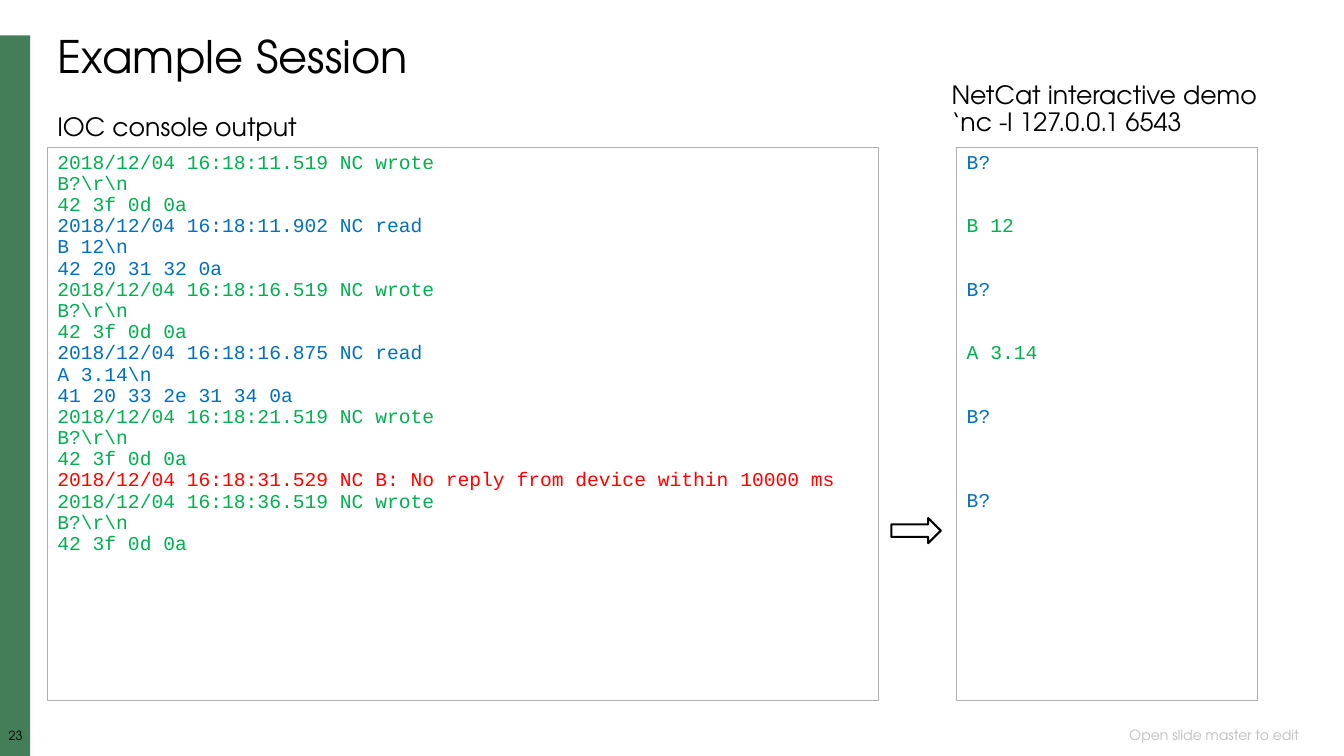
"""Build the example session slide with its console and client panels."""
from dataclasses import dataclass
from typing import Any

from pptx import Presentation, util as u
from pptx.dml.color import RGBColor
from pptx.enum import shapes, text


@dataclass(frozen=True)
class Theme:
    heading: str = "TeX Gyre Adventor"
    mono: str = "Courier New"
    ink: str = "000000"
    band: str = "447E59"
    border: str = "AEB0AF"
    muted: str = "BFBFBF"
    wrote: str = "00B050"
    read: str = "0070C0"
    error: str = "FF0000"
    title_size: int = 32
    label_size: int = 18
    code_size: int = 14
    footer_size: int = 10
    number_size: int = 9
    leading: float = 0.9
    code_pitch: float = 15.12


@dataclass(frozen=True)
class Area:
    """Hold a position and size in percent of the slide."""
    left: float
    top: float
    width: float
    height: float


@dataclass(frozen=True)
class Line:
    words: str
    colour: str
    rows_skipped: int = 0


@dataclass(frozen=True)
class Block:
    area: Area
    lines: list[Line]
    size: int
    font: str
    frame_format: dict[str, Any]
    align: Any = text.PP_ALIGN.LEFT


@dataclass(frozen=True)
class Outline:
    kind: Any
    area: Area
    fill: str | None = None
    line: str | None = None
    weight: float = 0


THEME = Theme()
PANEL_TOP, PANEL_HEIGHT = 19.47, 73.2
TEXT_LEFT = 3.53
CONSOLE = Area(TEXT_LEFT, PANEL_TOP, 61.82, PANEL_HEIGHT)
CLIENT = Area(71.19, PANEL_TOP, 22.36, PANEL_HEIGHT)
WRAPPED = {"word_wrap": True}
UNWRAPPED = {"word_wrap": False}
CENTRED = {"word_wrap": True, "vertical_anchor": text.MSO_ANCHOR.MIDDLE}
NO_MARGINS = {"word_wrap": True, "margin_left": 0, "margin_top": 0,
              "margin_right": 0, "margin_bottom": 0}

QUERY = ("NC wrote", r"B?\r\n", "42 3f 0d 0a")
EVENTS = [
    ("16:18:11.519", THEME.wrote, QUERY),
    ("16:18:11.902", THEME.read, ("NC read", r"B 12\n", "42 20 31 32 0a")),
    ("16:18:16.519", THEME.wrote, QUERY),
    ("16:18:16.875", THEME.read, ("NC read", r"A 3.14\n", "41 20 33 2e 31 34 0a")),
    ("16:18:21.519", THEME.wrote, QUERY),
    ("16:18:31.529", THEME.error, ("NC B: No reply from device within 10000 ms",)),
    ("16:18:36.519", THEME.wrote, QUERY),
]
CONSOLE_LINES = [
    Line(words if row else f"2018/12/04 {time} {words}", colour)
    for time, colour, message in EVENTS
    for row, words in enumerate(message)
]
CLIENT_LINES = [
    Line("B?", THEME.read),
    Line("B 12", THEME.wrote, 2),
    Line("B?", THEME.read, 2),
    Line("A 3.14", THEME.wrote, 2),
    Line("B?", THEME.read, 2),
    Line("B?", THEME.read, 3),
]

OUTLINES = [
    Outline(shapes.MSO_SHAPE.RECTANGLE, Area(0, 4.67, 2.25, 95.33), fill=THEME.band),
    Outline(shapes.MSO_SHAPE.RECTANGLE, CLIENT, line=THEME.border, weight=0.75),
    Outline(shapes.MSO_SHAPE.RECTANGLE, CONSOLE, line=THEME.border, weight=0.75),
    Outline(shapes.MSO_SHAPE.RIGHT_ARROW, Area(66.32, 68.53, 3.68, 3.33),
            line=THEME.ink, weight=1.5),
]
BLOCKS = [
    Block(Area(0, 96.53, 2.33, 2.27), [Line("23", THEME.ink)],
          THEME.number_size, THEME.heading, NO_MARGINS, text.PP_ALIGN.CENTER),
    Block(Area(65.72, 96, 31.66, 2.67), [Line("Open slide master to edit", THEME.muted)],
          THEME.footer_size, THEME.heading, CENTRED, text.PP_ALIGN.RIGHT),
    Block(Area(TEXT_LEFT, 4, 93.77, 7.87), [Line("Example Session", THEME.ink)],
          THEME.title_size, THEME.heading, WRAPPED),
    Block(Area(TEXT_LEFT, 14.53, 19.5, 4.93), [Line("IOC console output", THEME.ink)],
          THEME.label_size, THEME.heading, UNWRAPPED),
    Block(Area(70.07, 10.27, 24.68, 8.67),
          [Line("NetCat interactive demo", THEME.ink),
           Line("‘nc -l 127.0.0.1 6543", THEME.ink)],
          THEME.label_size, THEME.heading, UNWRAPPED),
    Block(CLIENT, CLIENT_LINES, THEME.code_size, THEME.mono, WRAPPED),
    Block(CONSOLE, CONSOLE_LINES, THEME.code_size, THEME.mono, WRAPPED),
]


def place(area: Area, deck: Any) -> tuple[int, int, int, int]:
    """Convert percentages to slide lengths."""
    across, down = deck.slide_width / 100, deck.slide_height / 100
    return (round(area.left * across), round(area.top * down),
            round(area.width * across), round(area.height * down))


def draw_outline(slide: Any, deck: Any, outline: Outline) -> None:
    """Draw one filled or outlined preset shape."""
    drawn = slide.shapes.add_shape(outline.kind, *place(outline.area, deck))
    drawn.shadow.inherit = False
    if outline.fill:
        drawn.fill.solid()
        drawn.fill.fore_color.rgb = RGBColor.from_string(outline.fill)
    else:
        drawn.fill.background()
    if outline.line:
        drawn.line.color.rgb = RGBColor.from_string(outline.line)
        drawn.line.width = u.Pt(outline.weight)
    else:
        drawn.line.fill.background()


def write_block(slide: Any, deck: Any, block: Block) -> None:
    """Write the lines of one text block."""
    frame = slide.shapes.add_textbox(*place(block.area, deck)).text_frame
    for key, value in block.frame_format.items():
        setattr(frame, key, value)
    for index, line in enumerate(block.lines):
        paragraph = frame.add_paragraph() if index else frame.paragraphs[0]
        paragraph.alignment = block.align
        paragraph.line_spacing = THEME.leading
        if line.rows_skipped:
            paragraph.space_before = u.Pt(line.rows_skipped * THEME.code_pitch)
        run = paragraph.add_run()
        run.text = line.words
        for key, value in {"name": block.font, "size": u.Pt(block.size)}.items():
            setattr(run.font, key, value)
        run.font.color.rgb = RGBColor.from_string(line.colour)


def main() -> None:
    """Create and save the slide."""
    deck = Presentation()
    deck.slide_width, deck.slide_height = u.Inches(13.33), u.Inches(7.5)
    slide = deck.slides.add_slide(deck.slide_layouts[6])
    for outline in OUTLINES:
        draw_outline(slide, deck, outline)
    for block in BLOCKS:
        write_block(slide, deck, block)
    deck.save("out.pptx")


if __name__ == "__main__":
    main()
